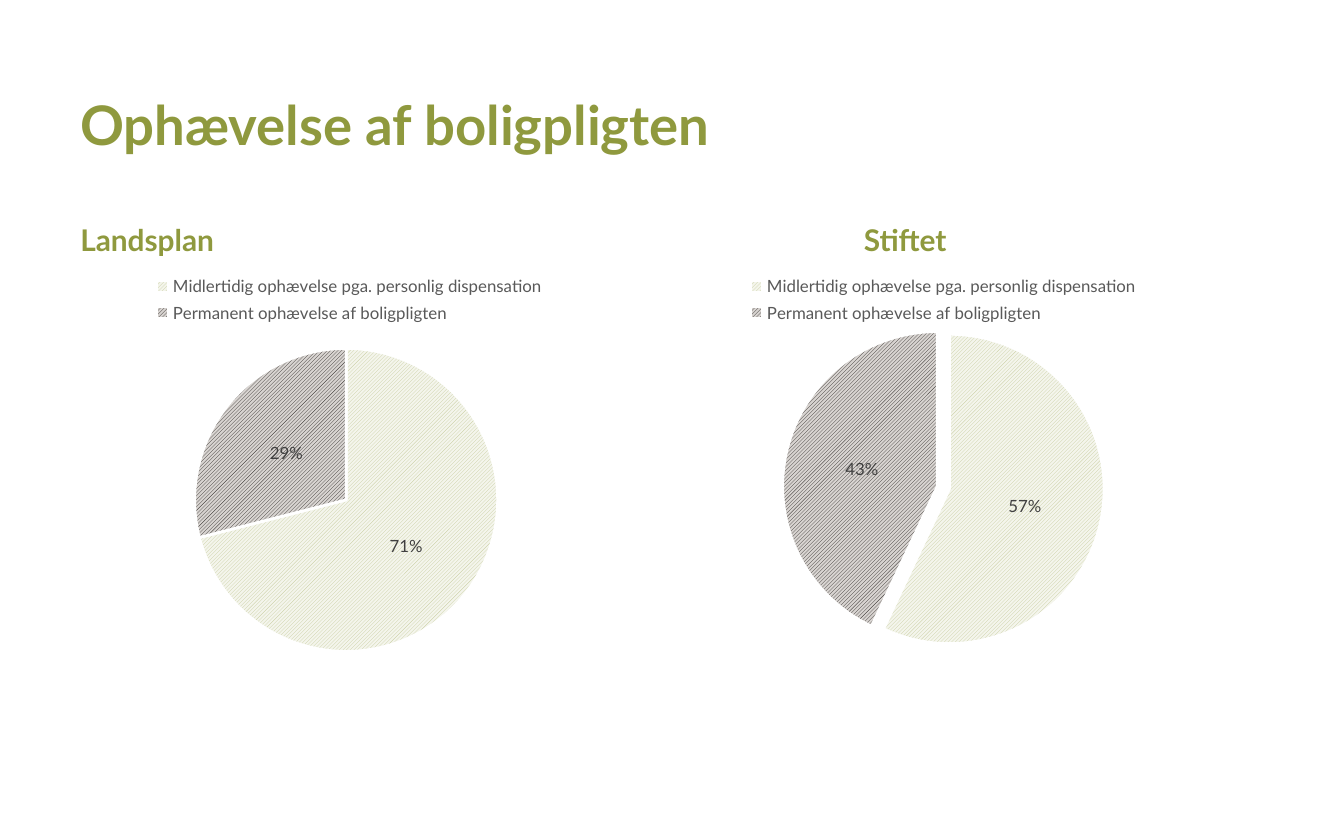
from dataclasses import dataclass

from lxml.etree import SubElement
from pptx import Presentation
from pptx.chart.data import CategoryChartData as ChartData
from pptx.dml.color import RGBColor as RGB
from pptx.enum.chart import XL_CHART_TYPE as Kind
from pptx.enum.chart import XL_LABEL_POSITION as Spot
from pptx.enum.chart import XL_LEGEND_POSITION as Side
from pptx.enum.dml import MSO_PATTERN as Pattern
from pptx.oxml import parse_xml
from pptx.oxml.ns import nsdecls, qn
from pptx.util import Inches, Pt


@dataclass(frozen=True)
class Theme:
    font: str = "Lato"
    green: str = "8F993E"
    white: str = "FFFFFF"
    legend: str = "595959"
    label: str = "404040"
    hatch: tuple = (("C7CC9E", "F4F5EC"), ("2D2926", "D8D4D1"))
    title: float = 29.2
    head: float = 16
    small: float = 9


THEME = Theme()
CATS = ("Midlertidig ophævelse pga. personlig dispensation",
        "Permanent ophævelse af boligpligten")


def style(font, size, color, bold=False):
    font.name = THEME.font
    font.size = Pt(size)
    font.bold = bold
    font.color.rgb = RGB.from_string(color)


def add_text(slide, text, left, top, width, height, size, color=THEME.green, bold=True):
    box = slide.shapes.add_textbox(*map(Inches, (left, top, width, height)))
    box.text_frame.word_wrap = True
    run = box.text_frame.paragraphs[0].add_run()
    run.text = text
    style(run.font, size, color, bold)


def place_plot(chart, frame):
    """Fix the plot area at x, y, w, h, each a share of the chart."""
    area = chart._chartSpace.chart.plotArea
    for old in area.findall(qn("c:layout")):
        area.remove(old)
    layout = parse_xml(f"<c:layout {nsdecls('c')}><c:manualLayout/></c:layout>")
    area.insert(0, layout)
    rules = [("layoutTarget", "inner"), ("xMode", "edge"), ("yMode", "edge")]
    for tag, val in rules + list(zip("xywh", frame)):
        SubElement(layout[0], qn(f"c:{tag}")).set("val", str(val))


def paint(series, explode):
    for i, (fore, back) in enumerate(THEME.hatch):
        form = series.points[i].format
        form.fill.patterned()
        form.fill.pattern = Pattern.LIGHT_UPWARD_DIAGONAL
        form.fill.fore_color.rgb = RGB.from_string(fore)
        form.fill.back_color.rgb = RGB.from_string(back)
        form.line.color.rgb = RGB.from_string(THEME.white)
        form.line.width = Pt(1.5)
    if explode:
        gap = parse_xml(f'<c:explosion {nsdecls("c")} val="{explode}"/>')
        series._element.find(qn("c:dPt")).addprevious(gap)


def add_pie(slide, vals, left, width, frame, explode=0):
    data = ChartData()
    data.categories = CATS
    data.add_series("Series 1", vals)
    box = map(Inches, (left, 1.94, width, 3.07))
    chart = slide.shapes.add_chart(Kind.PIE, *box, data).chart
    chart.has_title = False
    chart.font.name = THEME.font
    chart.font.size = Pt(10)
    chart.has_legend = True
    chart.legend.position = Side.TOP
    chart.legend.include_in_layout = False
    style(chart.legend.font, THEME.small, THEME.legend)

    plot = chart.plots[0]
    plot.vary_by_categories = True
    paint(plot.series[0], explode)
    labels = plot.series[0].data_labels
    labels.show_percentage = True
    labels.show_value = False
    labels.number_format = "0%"
    labels.number_format_is_linked = False
    labels.position = Spot.CENTER
    style(labels.font, THEME.small, THEME.label)
    place_plot(chart, frame)


def main():
    deck = Presentation()
    deck.slide_width, deck.slide_height = Inches(10), Inches(6.25)
    slide = deck.slides.add_slide(deck.slide_layouts[6])
    add_text(slide, "Ophævelse af boligpligten", 0.5, 0.63, 9, 0.69, THEME.title)
    for name, left in (("Landsplan", 0.5), ("Stiftet", 6.33)):
        add_text(slide, name, left, 1.6, 3, 0.37, THEME.head)
    add_pie(slide, (71, 29), 0.2, 4.8, (0.26, 0.21, 0.47, 0.74))
    add_pie(slide, (57, 43), 4.69, 4.66, (0.24, 0.16, 0.52, 0.78), explode=4)
    deck.save("out.pptx")


if __name__ == "__main__":
    main()
